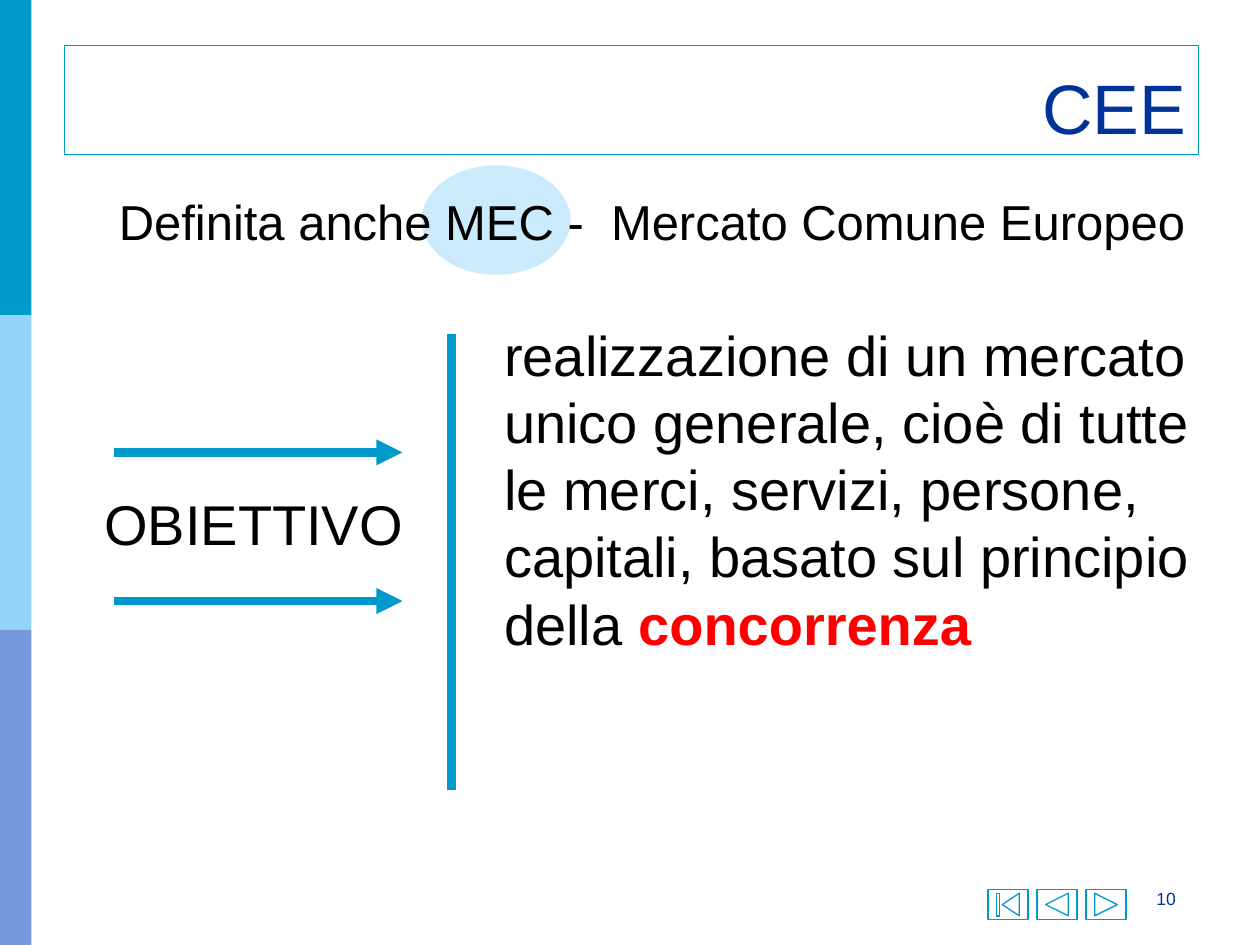
from lxml.etree import SubElement
from pptx import Presentation
from pptx.dml.color import RGBColor
from pptx.enum.shapes import MSO_CONNECTOR as Connector, MSO_SHAPE as Shape
from pptx.enum.text import MSO_ANCHOR as Anchor, PP_ALIGN as Align
from pptx.oxml.ns import qn
from pptx.util import Pt

COLORS = {
    "accent": "0099CC",
    "light": "93D5F9",
    "band": "3366CC",
    "navy": "003399",
    "text": "000000",
    "highlight": "FF0000",
}
FONT = "Arial"


def rgb(name):
    return RGBColor.from_string(COLORS[name])


def add_panel(slide, kind, box, fill=None, line=None, opacity=100):
    shape = slide.shapes.add_shape(kind, *map(Pt, box))
    shape.shadow.inherit = False
    if fill:
        shape.fill.solid()
        shape.fill.fore_color.rgb = rgb(fill)
        if opacity < 100:
            color = shape.fill._xPr.find(qn("a:solidFill"))[0]
            SubElement(color, qn("a:alpha"), val=str(opacity * 1000))
    else:
        shape.fill.background()
    if line:
        shape.line.color.rgb = rgb(line)
        shape.line.width = Pt(0.75)
    else:
        shape.line.fill.background()
    return shape


def write_text(shape, text, size, color="text", align=Align.LEFT,
               anchor=Anchor.TOP, emphasis=""):
    frame = shape.text_frame
    frame.word_wrap = True
    frame.vertical_anchor = anchor
    paragraph = frame.paragraphs[0]
    paragraph.alignment = align
    for content, shade, bold in ((text, color, False), (emphasis, "highlight", True)):
        if content:
            run = paragraph.add_run()
            run.text = content
            run.font.name = FONT
            run.font.size = Pt(size)
            run.font.bold = bold
            run.font.color.rgb = rgb(shade)


def add_text(slide, box, text, size, **formatting):
    write_text(slide.shapes.add_textbox(*map(Pt, box)), text, size, **formatting)


def add_rule(slide, start, end, arrow=False):
    rule = slide.shapes.add_connector(Connector.STRAIGHT, *map(Pt, start + end))
    rule.line.color.rgb = rgb("accent")
    rule.line.width = Pt(5)
    if arrow:
        SubElement(rule.line._get_or_add_ln(), qn("a:tailEnd"), type="triangle")
    SubElement(rule._element.spPr, qn("a:effectLst"))


def add_side_band(slide, left, top, width, height):
    part = height / 3
    bands = (("accent", 100), ("light", 100), ("band", 67))
    for index, (color, opacity) in enumerate(bands):
        box = (left, top + index * part, width, part)
        add_panel(slide, Shape.RECTANGLE, box, fill=color, opacity=opacity)


def add_navigation(slide, left, top, width, height):
    buttons = (
        Shape.ACTION_BUTTON_BEGINNING,
        Shape.ACTION_BUTTON_BACK_OR_PREVIOUS,
        Shape.ACTION_BUTTON_FORWARD_OR_NEXT,
    )
    button_width = 23
    pitch = 28
    for index, kind in enumerate(buttons):
        box = (left + index * pitch, top + 4.3, button_width, height - 4.3)
        add_panel(slide, kind, box, line="accent")
    add_text(slide, (left + width - 69, top, 69, 36), "10", 10,
             color="navy", align=Align.RIGHT)


def add_title(slide, left, top, width, height):
    title = add_panel(slide, Shape.RECTANGLE, (left, top, width, height), line="accent")
    write_text(title, "CEE", 40, color="navy", align=Align.RIGHT, anchor=Anchor.BOTTOM)


def add_definition(slide, left, top, width, height):
    add_panel(slide, Shape.OVAL, (left + 216, top, 85, height), fill="light", opacity=48)
    add_text(slide, (left, top + 11.5, width, 41),
             "Definita anche MEC -  Mercato Comune Europeo", 28, align=Align.CENTER)


def add_objective(slide, left, top, width, height):
    label_width = 193
    label_height = 46
    label_top = top + 96.5
    center = label_top + label_height / 2
    add_text(slide, (left, label_top, label_width, label_height),
             "OBIETTIVO", 32, align=Align.CENTER)
    add_text(slide, (left + 232.5, top, width - 232.5, 202),
             "realizzazione di un mercato unico generale, cioè di tutte le merci, "
             "servizi, persone, capitali, basato sul principio della ",
             32, emphasis="concorrenza")
    for y in (center - 40.5, center + 44.5):
        add_rule(slide, (left + 16.5, y), (left + 181.5, y), arrow=True)
    divider = left + 209.5
    add_rule(slide, (divider, top + 11.5), (divider, top + height))


def main():
    presentation = Presentation()
    presentation.slide_width = Pt(720)
    presentation.slide_height = Pt(540)
    slide = presentation.slides.add_slide(presentation.slide_layouts[6])
    add_side_band(slide, 0, 0, 18, 540)
    add_navigation(slide, 564.5, 504, 114.5, 21.5)
    add_definition(slide, 25, 94.5, 695, 62.5)
    add_title(slide, 37, 26, 648, 62.5)
    add_objective(slide, 48.5, 179.5, 649.5, 272)
    presentation.save("out.pptx")


if __name__ == "__main__":
    main()
